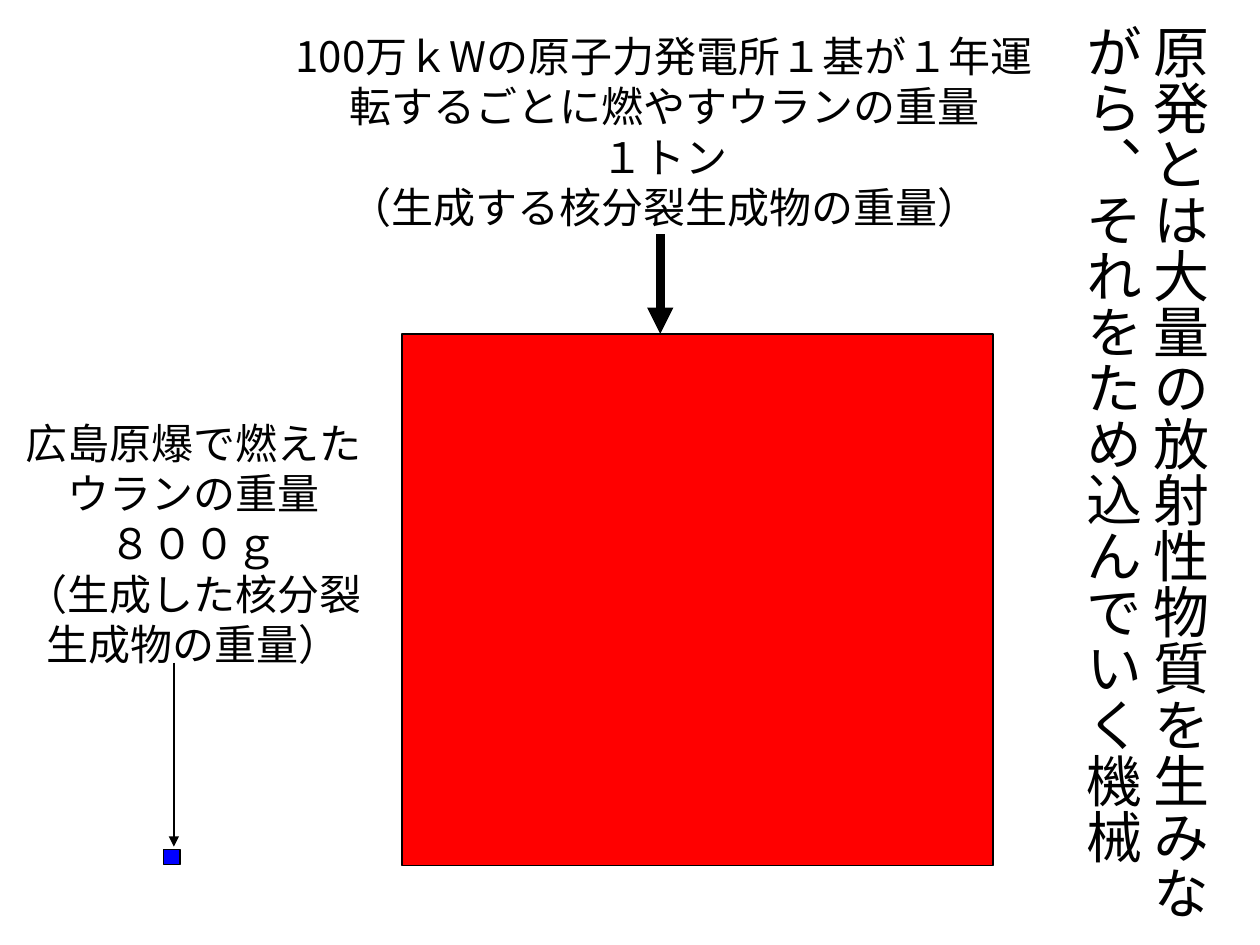
from dataclasses import dataclass

from lxml import etree
from pptx import Presentation
from pptx.dml.color import RGBColor
from pptx.enum.shapes import MSO_CONNECTOR, MSO_SHAPE
from pptx.enum.text import MSO_ANCHOR, MSO_AUTO_SIZE, PP_ALIGN
from pptx.oxml.ns import qn
from pptx.util import Inches, Pt

RECTANGLE = MSO_SHAPE.RECTANGLE
STRAIGHT = MSO_CONNECTOR.STRAIGHT
TOP = MSO_ANCHOR.TOP
NO_AUTOFIT = MSO_AUTO_SIZE.NONE
LEFT = PP_ALIGN.LEFT
CENTER = PP_ALIGN.CENTER
TITLE_ONLY = 5


@dataclass(frozen=True)
class Theme:
    font: str = "Noto Sans CJK SC"
    ink: RGBColor = RGBColor(0, 0, 0)
    bomb: RGBColor = RGBColor(0, 0, 255)
    reactor: RGBColor = RGBColor(255, 0, 0)
    title_size: float = 32
    caption_size: float = 24
    line_ratio: float = 1.2
    outline: float = 0.75


THEME = Theme()


def apply_format(target, values):
    for attribute, value in values.items():
        setattr(target, attribute, value)


def place(element, left, top, width, height):
    apply_format(element, {
        "left": Inches(left), "top": Inches(top),
        "width": Inches(width), "height": Inches(height),
    })


def write_paragraphs(frame, lines, size, alignment):
    for index, line in enumerate(lines):
        paragraph = frame.add_paragraph() if index else frame.paragraphs[0]
        apply_format(paragraph, {
            "alignment": alignment, "line_spacing": Pt(size * THEME.line_ratio),
        })
        run = paragraph.add_run()
        run.text = line
        apply_format(run.font, {"size": Pt(size), "name": THEME.font})
        run.font.color.rgb = THEME.ink
        east_asian = etree.SubElement(run.font._element, qn("a:ea"))
        east_asian.set("typeface", THEME.font)


def set_vertical_title(slide, text, box):
    title = slide.shapes.title
    place(title, *box)
    frame = title.text_frame
    apply_format(frame, {
        "word_wrap": True, "auto_size": NO_AUTOFIT, "vertical_anchor": TOP,
        "margin_left": Inches(0.1), "margin_right": Inches(0.13),
        "margin_top": Inches(0.05), "margin_bottom": Inches(0.05),
    })
    frame._txBody.bodyPr.set("vert", "eaVert")
    write_paragraphs(frame, [text], THEME.title_size, LEFT)


def add_caption(slide, lines, box):
    frame = slide.shapes.add_textbox(*map(Inches, box)).text_frame
    apply_format(frame, {
        "word_wrap": True, "auto_size": NO_AUTOFIT, "vertical_anchor": TOP,
        "margin_left": Inches(0.1), "margin_right": Inches(0.1),
        "margin_top": Inches(0.08), "margin_bottom": Inches(0.02),
    })
    write_paragraphs(frame, lines, THEME.caption_size, CENTER)


def add_weight_square(slide, box, color):
    square = slide.shapes.add_shape(RECTANGLE, *map(Inches, box))
    square.shadow.inherit = False
    square.fill.solid()
    square.fill.fore_color.rgb = color
    square.line.color.rgb = THEME.ink
    square.line.width = Pt(THEME.outline)


def add_down_arrow(slide, x, start, end, width):
    arrow = slide.shapes.add_connector(
        STRAIGHT, Inches(x), Inches(start), Inches(x), Inches(end))
    arrow.line.color.rgb = THEME.ink
    arrow.line.width = Pt(width)
    head = etree.SubElement(arrow.line._get_or_add_ln(), qn("a:tailEnd"))
    head.set("type", "triangle")
    etree.SubElement(arrow._element.spPr, qn("a:effectLst"))


def main():
    presentation = Presentation()
    presentation.slide_width = Inches(10)
    presentation.slide_height = Inches(7.5)
    slide = presentation.slides.add_slide(presentation.slide_layouts[TITLE_ONLY])

    set_vertical_title(
        slide, "原発とは大量の放射性物質を生みながら、それをため込んでいく機械",
        (8.31, 0.14, 1.45, 7.36))

    add_weight_square(slide, (1.3, 6.74, 0.13, 0.12), THEME.bomb)
    add_weight_square(slide, (3.19, 2.65, 4.69, 4.22), THEME.reactor)

    add_caption(slide, [
        "広島原爆で燃えたウランの重量",
        "８００ｇ",
        "（生成した核分裂生成物の重量）",
    ], (0.04, 3.23, 2.99, 2.12))
    add_caption(slide, [
        "100万ｋWの原子力発電所１基が１年運転するごとに燃やすウランの重量",
        "１トン",
        "（生成する核分裂生成物の重量）",
    ], (2.23, 0.16, 6.08, 1.72))

    add_down_arrow(slide, 1.38, 5.26, 6.72, THEME.outline)
    add_down_arrow(slide, 5.24, 1.86, 2.65, 5)

    presentation.save("out.pptx")


if __name__ == "__main__":
    main()
